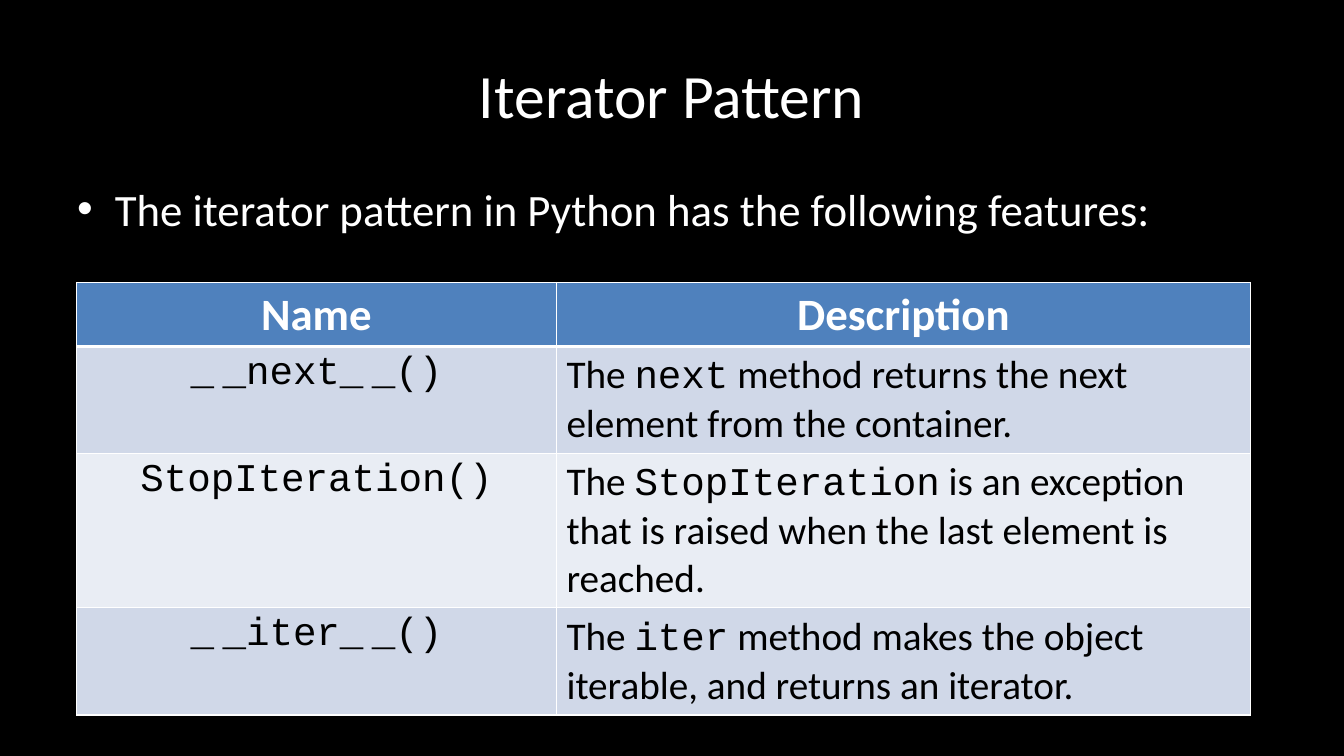
import pptx
import pptx.dml.color
import pptx.enum.text
import pptx.oxml
import pptx.oxml.ns
import pptx.util

HUES = {"back": "000000", "ink": "FFFFFF", "dark": "000000",
        "head": "4F81BD", "odd": "D0D8E8", "even": "E9EDF4"}
# Each style: font, size, colour, bold
STYLES = {"title": ("Calibri", 44, "ink", False),
          "body": ("Calibri", 32, "ink", False),
          "head": ("Calibri", 32, "ink", True),
          "text": ("Calibri", 28, "dark", False),
          "code": ("Courier New", 28, "dark", False),
          "gap": ("Courier New", 10, "dark", False)}
ALIGN = pptx.enum.text.PP_ALIGN
ANCHOR = pptx.enum.text.MSO_ANCHOR


def px(n):
    return pptx.util.Emu(n * 9525)


def rgb(hue):
    return pptx.dml.color.RGBColor.from_string(HUES[hue])


def node(tag, body="", **attrs):
    pairs = "".join(f' {key}="{val}"' for key, val in attrs.items())
    space = pptx.oxml.ns.nsdecls("a")
    return pptx.oxml.parse_xml(f"<a:{tag} {space}{pairs}>{body}</a:{tag}>")


class Deck:
    def __init__(self, wide, high):
        self.show = pptx.Presentation()
        self.show.slide_width = px(wide)
        self.show.slide_height = px(high)
        self.slide = self.show.slides.add_slide(self.show.slide_layouts[6])
        fill = self.slide.background.fill
        fill.solid()
        fill.fore_color.rgb = rgb("back")

    def line(self, para, runs, align):
        para.alignment = align
        for words, style in runs:
            run = para.add_run()
            run.text = words
            font = run.font
            font.name, size, hue, font.bold = STYLES[style]
            font.size = pptx.util.Pt(size)
            font.color.rgb = rgb(hue)

    def text(self, spot, runs, align=ALIGN.LEFT, anchor=ANCHOR.TOP, dent=0):
        frame = self.slide.shapes.add_textbox(*map(px, spot)).text_frame
        frame.word_wrap = True
        frame.vertical_anchor = anchor
        para = frame.paragraphs[0]
        if dent:
            props = para._p.get_or_add_pPr()
            props.set("marL", str(px(dent)))
            props.set("indent", str(px(-dent)))
            props.append(node("buFont", typeface="Arial"))
            props.append(node("buChar", char="•"))
        self.line(para, runs, align)

    def edge(self, cell, row):
        # The rule under the header row is thicker than the rest
        props = cell._tc.get_or_add_tcPr()
        thick = {"T": 3 if row == 1 else 1, "B": 3 if row == 0 else 1}
        body = (f'<a:solidFill><a:srgbClr val="{HUES["ink"]}"/></a:solidFill>'
                '<a:prstDash val="solid"/>')
        for place, side in enumerate("LRTB"):
            width = pptx.util.Pt(thick.get(side, 1))
            props.insert(place, node("ln" + side, body, w=width))

    def table(self, spot, cols, highs, rows):
        grid = self.slide.shapes.add_table(len(rows), len(cols), *map(px, spot)).table
        grid.first_row = grid.horz_banding = False
        for col, width in zip(grid.columns, cols):
            col.width = px(width)
        for r, (high, row) in enumerate(zip(highs, rows)):
            grid.rows[r].height = px(high)
            hue = "head" if r == 0 else "odd" if r % 2 else "even"
            for c, runs in enumerate(row):
                cell = grid.cell(r, c)
                cell.fill.solid()
                cell.fill.fore_color.rgb = rgb(hue)
                self.edge(cell, r)
                mid = r == 0 or c == 0
                self.line(cell.text_frame.paragraphs[0], runs,
                          ALIGN.CENTER if mid else ALIGN.LEFT)


def magic(name):
    # Thin gaps keep the paired underscores apart
    return [("_", "code"), (" ", "gap"), (f"_{name}_", "code"),
            (" ", "gap"), ("_()", "code")]


def about(name, rest):
    return [("The ", "text"), (name, "code"), (rest, "text")]


deck = Deck(1280, 720)

# Title and lead line
deck.text((64, 29, 1152, 120), [("Iterator Pattern", "title")],
          ALIGN.CENTER, ANCHOR.MIDDLE)
deck.text((64, 168, 1152, 475),
          [("The iterator pattern in Python has the following features:", "body")],
          dent=36)

# Feature table
rows = [
    ([("Name", "head")], [("Description", "head")]),
    (magic("next"),
     about("next", " method returns the next element from the container.")),
    ([("StopIteration()", "code")],
     about("StopIteration",
           " is an exception that is raised when the last element is reached.")),
    (magic("iter"),
     about("iter", " method makes the object iterable, and returns an iterator.")),
]
highs = (61, 102, 147, 102)
deck.table((73, 269, 1118, sum(highs)), (457, 661), highs, rows)

deck.show.save("out.pptx")
